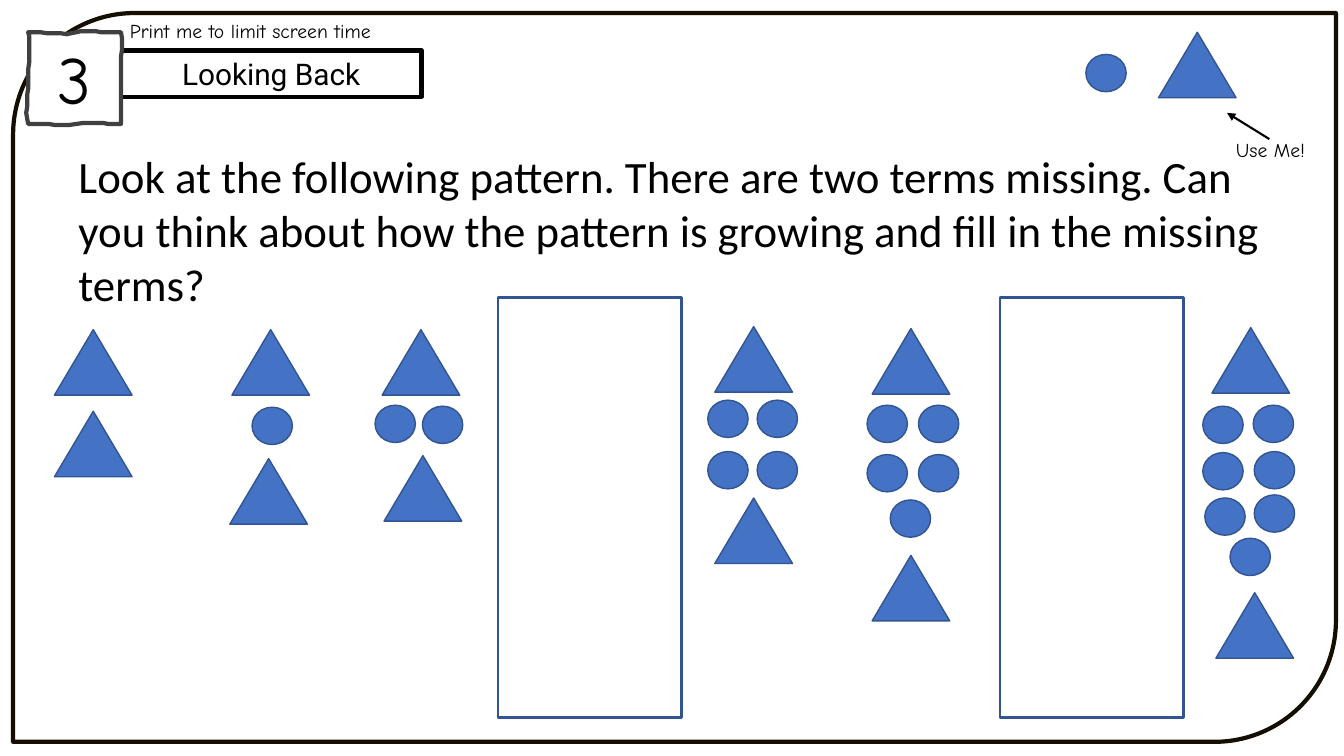
import pptx
import pptx.util
import pptx.dml.color
import pptx.enum.shapes
import pptx.enum.text
import pptx.oxml.ns
import lxml.etree

PX = 9144
BLACK, WHITE, BLUE, NAVY = "000000", "FFFFFF", "4472C4", "325491"
KINDS = pptx.enum.shapes.MSO_SHAPE
ALIGN = pptx.enum.text.PP_ALIGN
ANCHOR = pptx.enum.text.MSO_ANCHOR

TERMS = [
    ([(54, 327), (54, 408)], []),
    ([(230, 327), (228, 455)], [(250, 404)]),
    ([(379, 327), (381, 452)], [(372, 402), (419, 403)]),
    ([(709, 324), (709, 494)],
     [(702, 397), (751, 397), (702, 448), (751, 448)]),
    ([(865, 326), (865, 551)],
     [(860, 402), (911, 402), (860, 451), (911, 451), (883, 496)]),
    ([(1202, 325), (1206, 588)],
     [(1193, 403), (1243, 402), (1193, 449), (1244, 448),
      (1195, 494), (1244, 491), (1220, 534)]),
]
SAMPLE = ([(1149, 32)], [(1077, 54)])
GAPS = [494, 992]

SKETCH = [
    [(42, 31), (65, 36), (76, 32)],
    [(87, 28), (100, 34), (120, 32)],
    [(123, 47), (118, 66), (120, 75)],
    [(121, 85), (119, 102), (120, 123)],
    [(109, 124), (97, 120), (76, 123)],
    [(56, 127), (52, 121), (28, 123)],
    [(24, 111), (29, 89), (28, 79)],
    [(28, 69), (30, 42), (28, 32)],
]


def px(*nums):
    return [round(n * PX) for n in nums]


def hue(code):
    return pptx.dml.color.RGBColor.from_string(code)


def write(shape, text, font="Calibri", size=14, color=BLACK,
          align=ALIGN.LEFT, anchor=ANCHOR.TOP, wrap=True):
    frame = shape.text_frame
    frame.word_wrap = wrap
    frame.auto_size = pptx.enum.text.MSO_AUTO_SIZE.NONE
    frame.vertical_anchor = anchor
    para = frame.paragraphs[0]
    para.alignment = align
    run = para.add_run()
    run.text = text
    run.font.name = font
    run.font.size = pptx.util.Pt(size)
    run.font.color.rgb = hue(color)


def curve(start, bends, steps=8):
    dots = []
    for a, b, end in bends:
        for i in range(1, steps + 1):
            t = i / steps
            u = 1 - t
            dots.append(tuple(
                u**3 * p + 3 * u * u * t * q + 3 * u * t * t * r + t**3 * s
                for p, q, r, s in zip(start, a, b, end)))
        start = end
    return dots


class Sheet:
    """Draw styled elements on one slide."""

    def __init__(self, slide):
        self.slide = slide
        self.shapes = slide.shapes

    def style(self, shape, fill, line, width):
        shape.shadow.inherit = False
        if fill:
            shape.fill.solid()
            shape.fill.fore_color.rgb = hue(fill)
        else:
            shape.fill.background()
        shape.line.color.rgb = hue(line)
        shape.line.width = pptx.util.Pt(width)

    def shape(self, kind, box, fill=None, line=NAVY, width=1):
        shape = self.shapes.add_shape(kind, *px(*box))
        self.style(shape, fill, line, width)
        return shape

    def term(self, peaks, dots):
        for x, y in peaks:
            self.shape(KINDS.ISOSCELES_TRIANGLE, (x, y, 77, 65), BLUE)
        for x, y in dots:
            self.shape(KINDS.OVAL, (x, y, 40, 37), BLUE)

    def badge(self, text, start, bends):
        build = self.shapes.build_freeform(*start, scale=PX)
        build.add_line_segments(curve(start, bends), close=True)
        shape = build.convert_to_shape()
        self.style(shape, WHITE, "404040", 3)
        write(shape, text, font="Comic Neue", size=48, align=ALIGN.CENTER,
              anchor=ANCHOR.MIDDLE, wrap=False)

    def title(self, text, box):
        shape = self.shapes.title
        shape.left, shape.top, shape.width, shape.height = px(*box)
        shape.fill.background()
        shape.line.color.rgb = hue(BLACK)
        shape.line.width = pptx.util.Pt(3)
        write(shape, text, font="Roboto", size=21.3, align=ALIGN.CENTER,
              anchor=ANCHOR.MIDDLE)

    def text(self, text, box, **form):
        write(self.shapes.add_textbox(*px(*box)), text, **form)

    def arrow(self, ends):
        kind = pptx.enum.shapes.MSO_CONNECTOR.STRAIGHT
        line = self.shapes.add_connector(kind, *px(*ends))
        line.line.color.rgb = hue(BLACK)
        line.line.width = pptx.util.Pt(1.5)
        name = pptx.oxml.ns.qn
        stroke = line.line._get_or_add_ln()
        lxml.etree.SubElement(stroke, name("a:tailEnd"), type="triangle")
        lxml.etree.SubElement(line._element.spPr, name("a:effectLst"))


def main():
    deck = pptx.Presentation()
    deck.slide_width, deck.slide_height = px(1333, 750)
    sheet = Sheet(deck.slides.add_slide(deck.slide_layouts[5]))

    sheet.shape(KINDS.ROUND_2_DIAG_RECTANGLE, (13, 13, 1312, 723),
                line="140F00", width=3)
    sheet.badge("3", (28, 32), SKETCH)
    sheet.title("Looking Back", (120, 50, 298, 46))
    sheet.text("Look at the following pattern. There are two terms missing. "
               "Can you think about how the pattern is growing and fill in "
               "the missing terms?", (68, 143, 1195, 172), size=32)
    for term in TERMS + [SAMPLE]:
        sheet.term(*term)
    for x in GAPS:
        sheet.shape(KINDS.RECTANGLE, (x, 295, 182, 417), width=1.75)
    sheet.text("Print me to limit screen time", (119, 14, 314, 34),
               font="Comic Neue")
    sheet.text("Use Me!", (1216, 132, 100, 34), font="Comic Neue")
    sheet.arrow((1259, 138, 1217, 112))
    deck.save("out.pptx")


if __name__ == "__main__":
    main()
